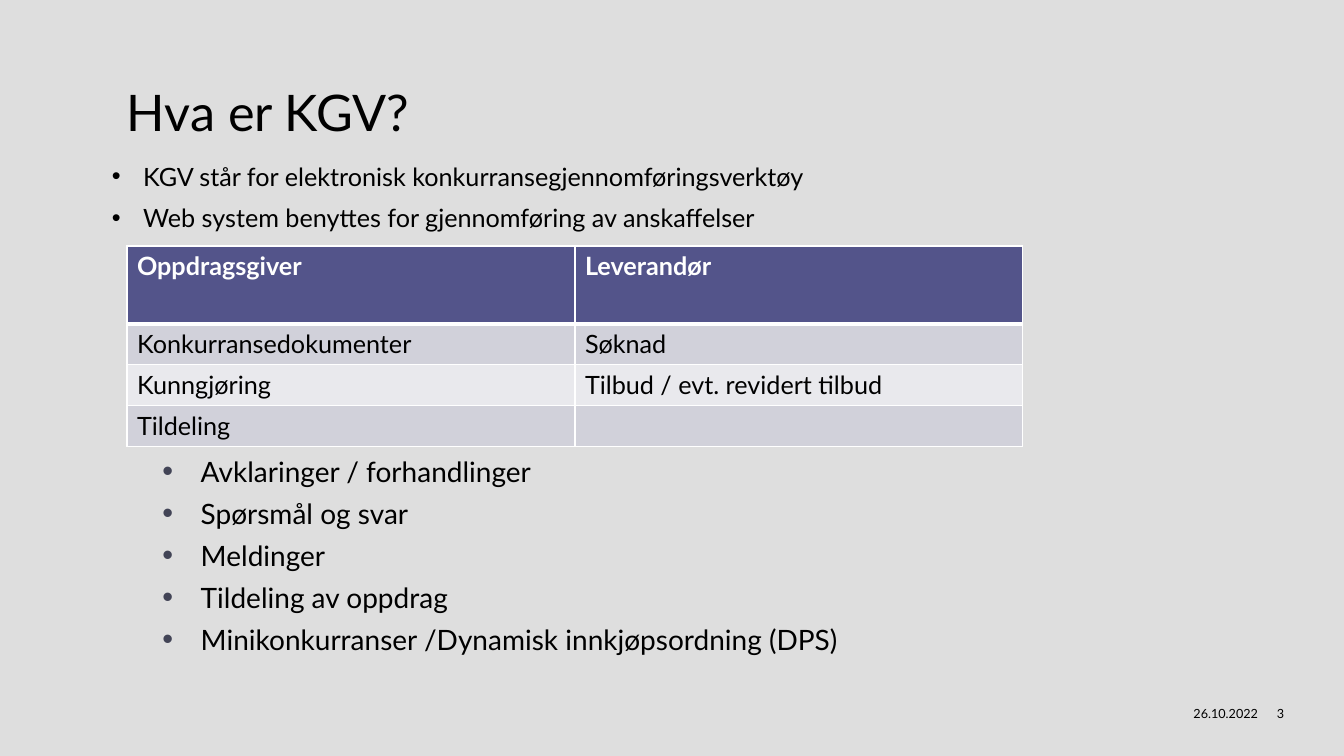
from dataclasses import dataclass

from lxml.etree import SubElement
from pptx import Presentation
from pptx.dml.color import RGBColor
from pptx.enum.text import MSO_ANCHOR, PP_ALIGN
from pptx.oxml.ns import qn
from pptx.util import Cm, Pt


@dataclass(frozen=True)
class Theme:
    font: str = "Lato"
    background: str = "DEDEDE"
    text: str = "000000"
    white: str = "FFFFFF"
    header: str = "53548A"
    bands: tuple[str, str] = ("D1D1DA", "E9E9ED")
    bullet: str = "424456"
    title_size: int = 36
    body_size: int = 18
    list_size: int = 20
    footer_size: int = 9


@dataclass(frozen=True)
class Label:
    lines: tuple[str, ...]
    left: float
    top: float
    width: float
    height: float
    size: int
    inset: tuple[float, float] = (0, 0)
    anchor: MSO_ANCHOR = MSO_ANCHOR.TOP
    align: PP_ALIGN = PP_ALIGN.LEFT


@dataclass(frozen=True)
class Bullet:
    margin: float
    hanging: float
    color: str
    percent: int
    before: int
    after: int


THEME = Theme()
FOOTER_INSET = (0.25, 0.13)

LABELS = (
    Label(("Hva er KGV?",), 3.2, 1.02, 25.43, 2.54, THEME.title_size,
          anchor=MSO_ANCHOR.BOTTOM),
    Label(("26.10.2022",), 28.22, 17.48, 3.73, 1.02, THEME.footer_size,
          FOOTER_INSET, MSO_ANCHOR.MIDDLE, PP_ALIGN.RIGHT),
    Label(("3",), 31.93, 17.48, 1.93, 1.02, THEME.footer_size,
          FOOTER_INSET, MSO_ANCHOR.MIDDLE),
)

LISTS = (
    (Label(("KGV står for elektronisk konkurransegjennomføringsverktøy",
            "Web system benyttes for gjennomføring av anskaffelser"),
           2.82, 4.06, 25.43, 2, THEME.body_size),
     Bullet(0.79, 0.79, THEME.text, 100, 6, 2)),
    (Label(("Avklaringer / forhandlinger",
            "Spørsmål og svar",
            "Meldinger",
            "Tildeling av oppdrag",
            "Minikonkurranser /Dynamisk innkjøpsordning (DPS)"),
           2.82, 11.45, 25.43, 5.2, THEME.list_size),
     Bullet(2.24, 0.97, THEME.bullet, 110, 6, 0)),
)

ROWS = (
    ("Oppdragsgiver", "Leverandør"),
    ("Konkurransedokumenter", "Søknad"),
    ("Kunngjøring", "Tilbud / evt. revidert tilbud"),
    ("Tildeling", ""),
)
HEADER_HEIGHT, ROW_HEIGHT, COLUMN_WIDTH = 1.96, 1.03, 11.29


def style_runs(p, size: int, color: str, bold: bool = False) -> None:
    for r in p.runs:
        r.font.name = THEME.font
        r.font.size = Pt(size)
        r.font.bold = bold
        r.font.color.rgb = RGBColor.from_string(color)


def add_bullet(p, bullet: Bullet) -> None:
    pPr = p._p.get_or_add_pPr()
    pPr.set("marL", str(Cm(bullet.margin)))
    pPr.set("indent", str(-Cm(bullet.hanging)))
    color = SubElement(pPr, qn("a:buClr"))
    SubElement(color, qn("a:srgbClr"), val=bullet.color)
    SubElement(pPr, qn("a:buSzPct"), val=str(bullet.percent * 1000))
    SubElement(pPr, qn("a:buFont"), typeface="Arial")
    SubElement(pPr, qn("a:buChar"), char="•")


def add_label(s, label: Label, bullet: Bullet | None = None) -> None:
    box = s.shapes.add_textbox(Cm(label.left), Cm(label.top),
                               Cm(label.width), Cm(label.height))
    tf = box.text_frame
    tf.word_wrap = True
    tf.vertical_anchor = label.anchor
    tf.margin_left = tf.margin_right = Cm(label.inset[0])
    tf.margin_top = tf.margin_bottom = Cm(label.inset[1])
    tf.text = "\n".join(label.lines)
    for i, p in enumerate(tf.paragraphs):
        p.alignment = label.align
        if bullet:
            add_bullet(p, bullet)
            p.space_before = Pt(bullet.before if i else 0)
            p.space_after = Pt(bullet.after)
        style_runs(p, label.size, THEME.text)


def add_border(cell, side: str, width: float) -> None:
    line = SubElement(cell._tc.get_or_add_tcPr(), qn(f"a:ln{side}"),
                      w=str(Pt(width)))
    fill = SubElement(line, qn("a:solidFill"))
    SubElement(fill, qn("a:srgbClr"), val=THEME.white)


def add_roles_table(s, left: float, top: float) -> None:
    height = HEADER_HEIGHT + ROW_HEIGHT * (len(ROWS) - 1)
    table = s.shapes.add_table(len(ROWS), 2, Cm(left), Cm(top),
                               Cm(2 * COLUMN_WIDTH), Cm(height)).table
    for column in table.columns:
        column.width = Cm(COLUMN_WIDTH)
    for i, row in enumerate(ROWS):
        header = i == 0
        table.rows[i].height = Cm(HEADER_HEIGHT if header else ROW_HEIGHT)
        fill = THEME.header if header else THEME.bands[(i - 1) % 2]
        widths = {"L": 1, "R": 1, "T": 3 if i == 1 else 1, "B": 3 if header else 1}
        for j, text in enumerate(row):
            cell = table.cell(i, j)
            for side, width in widths.items():
                add_border(cell, side, width)
            cell.fill.solid()
            cell.fill.fore_color.rgb = RGBColor.from_string(fill)
            cell.text_frame.text = text
            style_runs(cell.text_frame.paragraphs[0], THEME.body_size,
                       THEME.white if header else THEME.text, header)


def main() -> None:
    prs = Presentation()
    prs.slide_width, prs.slide_height = Cm(33.87), Cm(19.05)
    s = prs.slides.add_slide(prs.slide_layouts[6])
    s.background.fill.solid()
    s.background.fill.fore_color.rgb = RGBColor.from_string(THEME.background)
    for label in LABELS:
        add_label(s, label)
    for label, bullet in LISTS:
        add_label(s, label, bullet)
    add_roles_table(s, 3.2, 6.2)
    prs.save("out.pptx")


if __name__ == "__main__":
    main()
